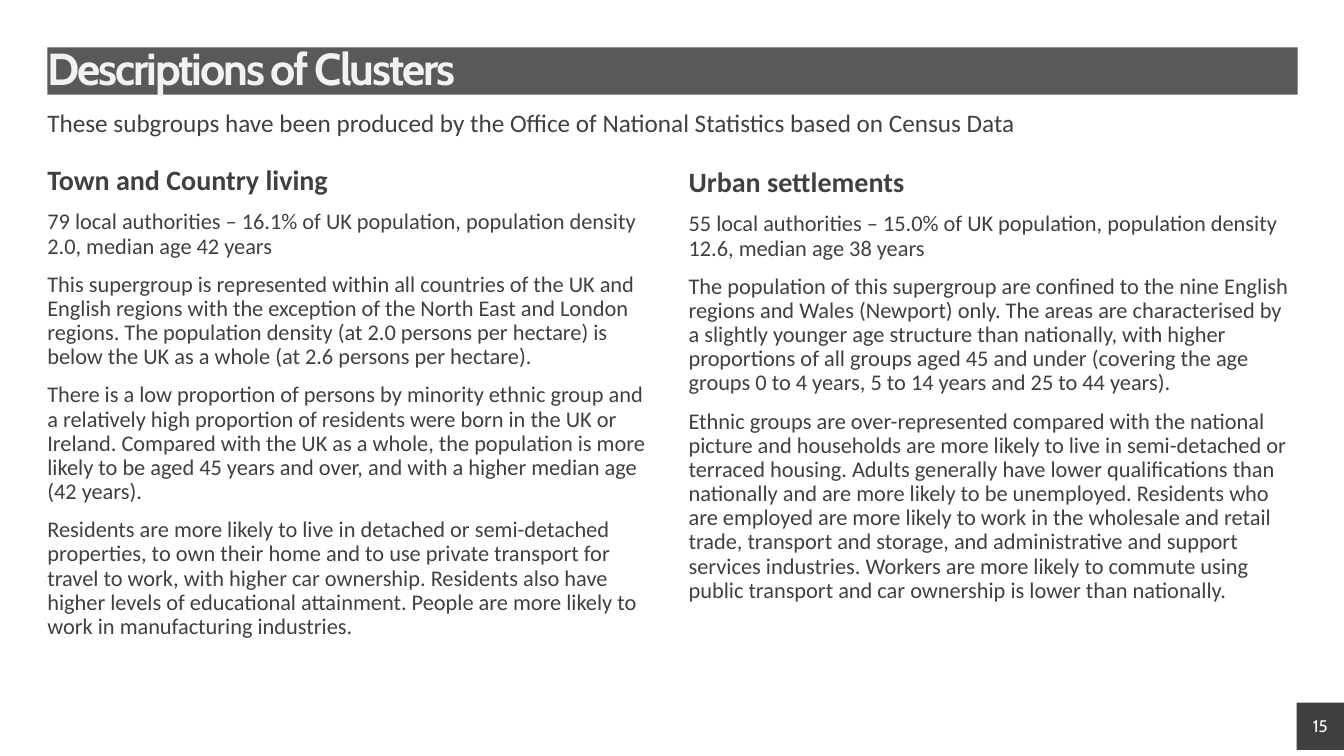
from dataclasses import dataclass

from pptx import Presentation
from pptx.dml.color import RGBColor
from pptx.enum.shapes import MSO_SHAPE
from pptx.enum.text import MSO_ANCHOR, PP_ALIGN
from pptx.util import Inches, Pt

RECTANGLE = MSO_SHAPE.RECTANGLE
TOP, MIDDLE = MSO_ANCHOR.TOP, MSO_ANCHOR.MIDDLE
LEFT, CENTER = PP_ALIGN.LEFT, PP_ALIGN.CENTER


@dataclass(frozen=True)
class Theme:
    title_font: str = "Cabin"
    body_font: str = "Calibri"
    title_fill: str = "595959"
    title_text: str = "F2F2F2"
    dark: str = "404040"
    white: str = "FFFFFF"
    title_size: int = 32
    heading_size: int = 20
    intro_size: int = 18
    body_size: int = 16
    number_size: int = 12


theme = Theme()

deck = Presentation()
deck.slide_width = Inches(13.33)
deck.slide_height = Inches(7.5)
page = deck.slides.add_slide(deck.slide_layouts[6])


def add_box(left, top, width, height, fill=None):
    place = [Inches(value) for value in (left, top, width, height)]
    if fill:
        box = page.shapes.add_shape(RECTANGLE, *place)
        box.shadow.inherit = False
        box.fill.solid()
        box.fill.fore_color.rgb = RGBColor.from_string(fill)
        box.line.fill.background()
    else:
        box = page.shapes.add_textbox(*place)
    frame = box.text_frame
    frame.word_wrap = True
    frame.margin_left = frame.margin_top = frame.margin_right = frame.margin_bottom = 0
    frame.vertical_anchor = MIDDLE if fill else TOP
    return frame


def add_text(para, text, size, color=theme.dark, font=theme.body_font,
             bold=False, align=LEFT, line=0.9, before=10):
    para.alignment = align
    para.line_spacing = line
    para.space_before = Pt(before)
    span = para.add_run()
    span.text = text
    span.font.name = font
    span.font.size = Pt(size)
    span.font.bold = bold
    span.font.color.rgb = RGBColor.from_string(color)
    return span


margin = 0.47
full_width = 12.4
column_width = 6.03

title = add_box(margin, margin, full_width, 0.47, theme.title_fill)
title_span = add_text(title.paragraphs[0], "Descriptions of Clusters", theme.title_size,
                      theme.title_text, theme.title_font, bold=True, before=0)
title_span.font._element.set("spc", "-150")

intro = add_box(margin, 1.1, full_width, 0.39)
add_text(intro.paragraphs[0],
         "These subgroups have been produced by the Office of National Statistics based on Census Data",
         theme.intro_size)

clusters = [
    (margin, 1.65, "Town and Country living", [
        "79 local authorities – 16.1% of UK population, population density 2.0, median age 42 years",
        "This supergroup is represented within all countries of the UK and English regions with the "
        "exception of the North East and London regions. The population density (at 2.0 persons per "
        "hectare) is below the UK as a whole (at 2.6 persons per hectare).",
        "There is a low proportion of persons by minority ethnic group and a relatively high proportion "
        "of residents were born in the UK or Ireland. Compared with the UK as a whole, the population is "
        "more likely to be aged 45 years and over, and with a higher median age (42 years).",
        "Residents are more likely to live in detached or semi-detached properties, to own their home "
        "and to use private transport for travel to work, with higher car ownership. Residents also have "
        "higher levels of educational attainment. People are more likely to work in manufacturing "
        "industries.",
    ]),
    (6.83, 1.67, "Urban settlements", [
        "55 local authorities – 15.0% of UK population, population density 12.6, median age 38 years",
        "The population of this supergroup are confined to the nine English regions and Wales (Newport) "
        "only. The areas are characterised by a slightly younger age structure than nationally, with "
        "higher proportions of all groups aged 45 and under (covering the age groups 0 to 4 years, "
        "5 to 14 years and 25 to 44 years).",
        "Ethnic groups are over-represented compared with the national picture and households are more "
        "likely to live in semi-detached or terraced housing. Adults generally have lower qualifications "
        "than nationally and are more likely to be unemployed. Residents who are employed are more likely "
        "to work in the wholesale and retail trade, transport and storage, and administrative and support "
        "services industries. Workers are more likely to commute using public transport and car ownership "
        "is lower than nationally.",
    ]),
]

for left, top, heading, descriptions in clusters:
    column = add_box(left, top, column_width, 5.12)
    add_text(column.paragraphs[0], heading, theme.heading_size, bold=True)
    for description in descriptions:
        add_text(column.add_paragraph(), description, theme.body_size)

number = add_box(12.86, 6.97, 0.47, 0.47, theme.dark)
add_text(number.paragraphs[0], "15", theme.number_size, theme.white, theme.title_font,
         align=CENTER, line=1.0, before=0)

deck.save("out.pptx")
